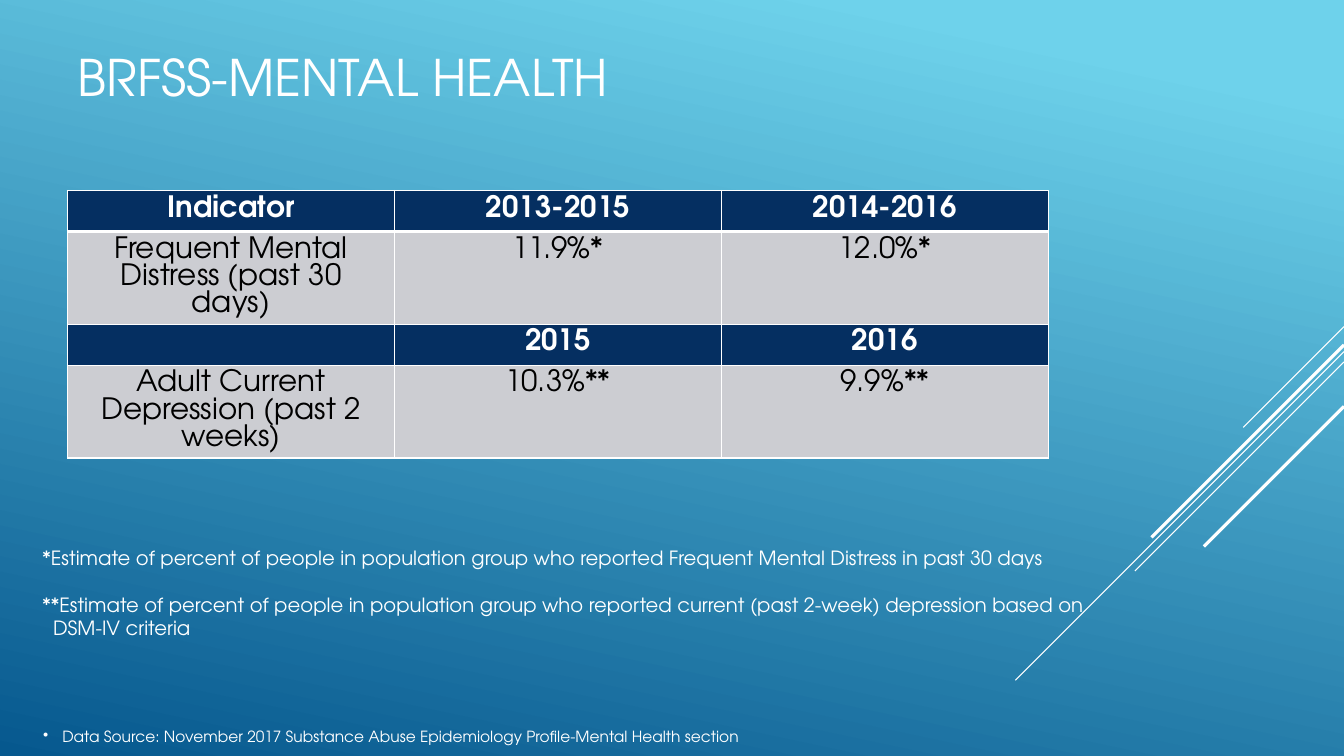
from lxml.etree import SubElement
from pptx import Presentation
from pptx.dml.color import RGBColor
from pptx.enum.shapes import MSO_CONNECTOR
from pptx.enum.text import MSO_ANCHOR, PP_ALIGN
from pptx.oxml.ns import qn
from pptx.util import Cm, Pt

WHITE = RGBColor(0xFF, 0xFF, 0xFF)
BLACK = RGBColor(0x00, 0x00, 0x00)
NAVY = RGBColor(0x05, 0x2F, 0x61)
GREY = RGBColor(0xCC, 0xCD, 0xD2)
SKY = RGBColor(0x6E, 0xD2, 0xEB)
DEEP = RGBColor(0x06, 0x58, 0x8E)
FONT = "TeX Gyre Adventor"
WIDTH, HEIGHT = 33.87, 19.05


def write(p, text, size=14, color=WHITE, bold=False, align=PP_ALIGN.LEFT):
    p.alignment = align
    r = p.add_run()
    r.text = text
    r.font.name, r.font.size, r.font.bold = FONT, Pt(size), bold
    r.font.color.rgb = color


def hang(p, indent, bullet=None):
    pPr = p._p.get_or_add_pPr()
    pPr.set("marL", str(Cm(indent)))
    pPr.set("indent", str(-Cm(indent)))
    if bullet:
        SubElement(pPr, qn("a:buChar")).set("char", bullet)


def border(cell, **widths):
    tcPr = cell._tc.get_or_add_tcPr()
    for side in "LRTB":
        ln = SubElement(tcPr, qn(f"a:ln{side}"), w=str(Pt(widths.get(side, 1))))
        fill = SubElement(ln, qn("a:solidFill"))
        SubElement(fill, qn("a:srgbClr"), val=str(WHITE))


class Deck:
    def __init__(self):
        self.prs = Presentation()
        self.prs.slide_width, self.prs.slide_height = Cm(WIDTH), Cm(HEIGHT)
        self.s = self.prs.slides.add_slide(self.prs.slide_layouts[5])

    def background(self, stops, angle):
        fill = self.s.background.fill
        fill.gradient()
        fill.gradient_angle = angle
        for stop, (position, color) in zip(fill.gradient_stops, stops):
            stop.position = position
            stop.color.rgb = color

    def line(self, x1, y1, x2, y2, width):
        c = self.s.shapes.add_connector(
            MSO_CONNECTOR.STRAIGHT, Cm(x1), Cm(y1), Cm(x2), Cm(y2))
        c.line.color.rgb = WHITE
        c.line.width = Pt(width)
        SubElement(c._element.spPr, qn("a:effectLst"))

    def title(self, text, x, y, w, h):
        sp = self.s.shapes.title
        sp.left, sp.top, sp.width, sp.height = Cm(x), Cm(y), Cm(w), Cm(h)
        tf = sp.text_frame
        tf.vertical_anchor = MSO_ANCHOR.MIDDLE
        write(tf.paragraphs[0], text, size=36)

    def text(self, x, y, w, h):
        tf = self.s.shapes.add_textbox(Cm(x), Cm(y), Cm(w), Cm(h)).text_frame
        tf.word_wrap = True
        return tf

    def table(self, rows, x, y, col_width, row_heights):
        cols = len(rows[0])
        tbl = self.s.shapes.add_table(
            len(rows), cols, Cm(x), Cm(y),
            Cm(col_width * cols), Cm(sum(row_heights))).table
        for col in tbl.columns:
            col.width = Cm(col_width)
        for i, (row, height) in enumerate(zip(rows, row_heights)):
            tbl.rows[i].height = Cm(height)
            is_head = i % 2 == 0
            for j, text in enumerate(row):
                cell = tbl.cell(i, j)
                border(cell, T=3 if i == 1 else 1, B=3 if i == 0 else 1)
                cell.fill.solid()
                cell.fill.fore_color.rgb = NAVY if is_head else GREY
                # Values and their footnote marks differ in weight
                p = cell.text_frame.paragraphs[0]
                color = WHITE if is_head else BLACK
                value = text.rstrip("*")
                write(p, value, size=21, bold=is_head, color=color,
                      align=PP_ALIGN.CENTER)
                if value != text:
                    write(p, text[len(value):], size=21, color=color,
                          align=PP_ALIGN.CENTER)


def main():
    deck = Deck()
    deck.background([(0.1, SKY), (1, DEEP)], angle=360 - 102)

    # Diagonal lines running in from the right edge at 45 degrees
    for y, run, width in [(8.23, 2.54, 0.75), (8.86, 8.28, 0.75),
                          (9.12, 5.27, 0.75), (8.69, 4.85, 2.25),
                          (10.24, 3.53, 2.25)]:
        deck.line(WIDTH, y, WIDTH - run, y + run, width)

    deck.title("BRFSS-MENTAL HEALTH", 1.7, 0.55, 18.06, 2.74)

    # Indicator table
    deck.table([
        ["Indicator", "2013-2015", "2014-2016"],
        ["Frequent Mental Distress (past 30 days)", "11.9%*", "12.0%*"],
        ["", "2015", "2016"],
        ["Adult Current Depression (past 2 weeks)", "10.3%**", "9.9%**"],
    ], 1.7, 4.8, 8.24, [1.03, 2.34] * 2)

    # Footnotes
    tf = deck.text(0.82, 13.64, 27, 2.64)
    write(tf.paragraphs[0], "*Estimate of percent of people in population group "
          "who reported Frequent Mental Distress in past 30 days")
    p = tf.add_paragraph()
    p.space_before = Pt(16.5)
    hang(p, 0.27)
    write(p, "**Estimate of percent of people in population group who reported "
          "current (past 2-week) depression based on DSM-IV criteria")

    # Data source
    p = deck.text(0.84, 18.21, 31.85, 0.74).paragraphs[0]
    hang(p, 0.48, bullet="•")
    write(p, "Data Source: November 2017 Substance Abuse Epidemiology "
          "Profile-Mental Health section", size=11)

    deck.prs.save("out.pptx")


if __name__ == "__main__":
    main()
